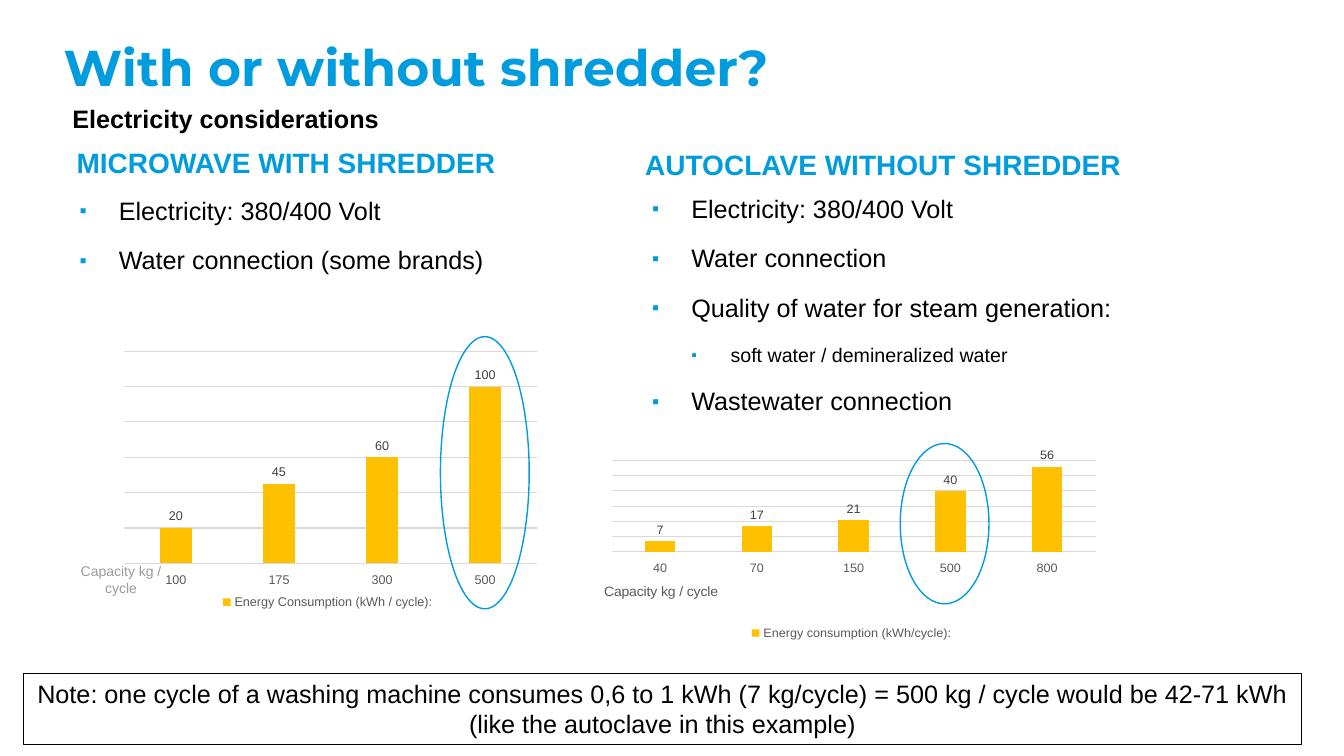
from dataclasses import dataclass

from lxml import etree
from pptx import Presentation
from pptx.chart.data import CategoryChartData
from pptx.dml.color import RGBColor
from pptx.enum.chart import XL_CHART_TYPE, XL_LABEL_POSITION, XL_LEGEND_POSITION, XL_TICK_LABEL_POSITION, XL_TICK_MARK
from pptx.enum.shapes import MSO_SHAPE
from pptx.enum.text import MSO_ANCHOR, MSO_AUTO_SIZE, PP_ALIGN
from pptx.oxml.ns import qn
from pptx.util import Pt

COLUMNS = XL_CHART_TYPE.COLUMN_CLUSTERED
OUTSIDE_END = XL_LABEL_POSITION.OUTSIDE_END
LEGEND_BOTTOM = XL_LEGEND_POSITION.BOTTOM
LABELS_LOW = XL_TICK_LABEL_POSITION.LOW
NO_TICK = XL_TICK_MARK.NONE
ELLIPSE, RECTANGLE = MSO_SHAPE.OVAL, MSO_SHAPE.RECTANGLE
TOP, MIDDLE, BOTTOM = MSO_ANCHOR.TOP, MSO_ANCHOR.MIDDLE, MSO_ANCHOR.BOTTOM
LEFT, CENTER, JUSTIFY = PP_ALIGN.LEFT, PP_ALIGN.CENTER, PP_ALIGN.JUSTIFY
NO_AUTOFIT = MSO_AUTO_SIZE.NONE
COMPARISON_LAYOUT = 4
BULLET_INDENT = 28


@dataclass(frozen=True)
class Theme:
    heading_font: str = "Montserrat"
    font: str = "Arial"
    blue: str = "009CDE"
    black: str = "000000"
    caption: str = "9B9B9B"
    axis_text: str = "595959"
    label_text: str = "404040"
    grid: str = "D9D9D9"
    bar: str = "FFC000"
    title_size: int = 36
    heading_size: int = 20
    body_size: int = 18
    detail_size: int = 14
    caption_size: int = 10
    chart_size: int = 9


@dataclass(frozen=True)
class Box:
    left: float
    top: float
    width: float
    height: float

    def lengths(self):
        return Pt(self.left), Pt(self.top), Pt(self.width), Pt(self.height)

    def inner(self, left, top, width, height):
        return Box(self.left + left, self.top + top, width, height)


THEME = Theme()


def style_font(font, size, color, bold=False, name=THEME.font):
    font.name, font.size, font.bold = name, Pt(size), bold
    font.color.rgb = RGBColor.from_string(color)


def style_line(line, color, width):
    line.color.rgb = RGBColor.from_string(color)
    line.width = Pt(width)


def place(shape, box):
    shape.left, shape.top, shape.width, shape.height = box.lengths()


def set_frame(text_frame, anchor, left, right, vertical=0):
    text_frame.word_wrap = True
    text_frame.auto_size = NO_AUTOFIT
    text_frame.vertical_anchor = anchor
    text_frame.margin_left, text_frame.margin_right = Pt(left), Pt(right)
    text_frame.margin_top = text_frame.margin_bottom = Pt(vertical)


def write_line(text_frame, text, alignment, size, color, bold=False, name=THEME.font):
    text_frame.text = text
    paragraph = text_frame.paragraphs[0]
    paragraph.alignment = alignment
    style_font(paragraph.runs[0].font, size, color, bold, name)
    return paragraph


def add_bullet(paragraph, level):
    properties = paragraph._p.get_or_add_pPr()
    properties.set("marL", str(Pt(BULLET_INDENT * (level + 1))))
    properties.set("indent", str(-Pt(BULLET_INDENT)))
    color = etree.SubElement(properties, qn("a:buClr"))
    etree.SubElement(color, qn("a:srgbClr"), val=THEME.blue)
    etree.SubElement(properties, qn("a:buSzPct"), val="80000")
    etree.SubElement(properties, qn("a:buFont"), typeface=THEME.font)
    etree.SubElement(properties, qn("a:buChar"), char="▪")


def set_layout(element, index, target=None, **fractions):
    """Fix a chart part at fractions of the chart area."""
    for old in element.findall(qn("c:layout")):
        element.remove(old)
    layout = etree.Element(qn("c:layout"))
    manual = etree.SubElement(layout, qn("c:manualLayout"))
    if target:
        etree.SubElement(manual, qn("c:layoutTarget"), val=target)
    for axis in "xy":
        etree.SubElement(manual, qn(f"c:{axis}Mode"), val="edge")
    for key, value in fractions.items():
        etree.SubElement(manual, qn(f"c:{key}"), val=str(value))
    element.insert(index, layout)


def add_outline(slide, preset, box, color, width):
    shape = slide.shapes.add_shape(preset, *box.lengths())
    shape.shadow.inherit = False
    shape.fill.background()
    style_line(shape.line, color, width)
    return shape


def add_text(slide, box, text, alignment, size, color, bold=False):
    text_box = slide.shapes.add_textbox(*box.lengths())
    set_frame(text_box.text_frame, TOP, 7.2, 7.2, 3.6)
    write_line(text_box.text_frame, text, alignment, size, color, bold)


def fill_header(slide, box):
    title = slide.shapes.title
    place(title, box)
    set_frame(title.text_frame, BOTTOM, 1.4, 28)
    paragraph = write_line(title.text_frame, "With or without shredder?", LEFT,
                           THEME.title_size, THEME.blue, True, THEME.heading_font)
    paragraph.line_spacing = 0.9
    add_text(slide, box.inner(0.6, 49, 260, 28.8), "Electricity considerations",
             LEFT, THEME.body_size, THEME.black, True)


def fill_heading(placeholder, box, text):
    place(placeholder, box)
    set_frame(placeholder.text_frame, MIDDLE, 7.2, 7.2)
    paragraph = write_line(placeholder.text_frame, text, LEFT, THEME.heading_size, THEME.blue, True)
    paragraph.line_spacing = 1.1
    paragraph.space_before, paragraph.space_after = Pt(0), Pt(6)


def fill_list(placeholder, box, items):
    place(placeholder, box)
    text_frame = placeholder.text_frame
    set_frame(text_frame, TOP, 1.4, 1.4)
    text_frame.text = "\n".join(text for text, level in items)
    for number, (paragraph, (text, level)) in enumerate(zip(text_frame.paragraphs, items)):
        paragraph.level = level
        add_bullet(paragraph, level)
        paragraph.alignment = JUSTIFY
        paragraph.line_spacing = 0.9
        paragraph.space_before, paragraph.space_after = Pt(10 if number else 0), Pt(6)
        size = THEME.detail_size if level else THEME.body_size
        style_font(paragraph.runs[0].font, size, THEME.black)


def add_energy_chart(slide, box, name, values, axis_top, plot_height, legend_left):
    data = CategoryChartData()
    data.categories = list(values)
    data.add_series(name, list(values.values()))
    chart = slide.shapes.add_chart(COLUMNS, *box.lengths(), data).chart
    style_font(chart.font, THEME.caption_size, THEME.black)
    chart.has_title = False

    # Bars and their values
    plot = chart.plots[0]
    plot.gap_width, plot.overlap, plot.vary_by_categories = 219, -27, False
    fill = plot.series[0].format.fill
    fill.solid()
    fill.fore_color.rgb = RGBColor.from_string(THEME.bar)
    plot.has_data_labels = True
    labels = plot.data_labels
    labels.show_value, labels.position = True, OUTSIDE_END
    style_font(labels.font, THEME.chart_size, THEME.label_text)

    # Axes
    value_axis, category_axis = chart.value_axis, chart.category_axis
    value_axis.minimum_scale, value_axis.maximum_scale = 0, axis_top
    value_axis.major_unit = axis_top / 6
    value_axis.visible = False
    style_line(value_axis.major_gridlines.format.line, THEME.grid, 0.75)
    category_axis.major_tick_mark = NO_TICK
    category_axis.tick_label_position = LABELS_LOW
    style_font(category_axis.tick_labels.font, THEME.chart_size, THEME.axis_text)
    style_line(category_axis.format.line, THEME.grid, 0.75)

    # Legend and plot area
    chart.has_legend = True
    chart.legend.position, chart.legend.include_in_layout = LEGEND_BOTTOM, False
    style_font(chart.legend.font, THEME.chart_size, THEME.axis_text)
    set_layout(chart.legend._element, 1, x=legend_left, y=0.9)
    plot_area = chart._chartSpace.chart.plotArea
    set_layout(plot_area, 0, "inner", x=0.02, y=round(4 / box.height, 2), w=0.96, h=plot_height)
    return chart


def fill_microwave(slide, box, heading, body):
    fill_heading(heading, box.inner(0, 0, 388.8, 58.3), "MICROWAVE WITH SHREDDER")
    fill_list(body, box.inner(8, 56, 388.8, 100),
              [("Electricity: 380/400 Volt", 0), ("Water connection (some brands)", 0)])
    add_energy_chart(slide, box.inner(35.3, 161.3, 306.7, 194.4), "Energy Consumption (kWh / cycle):",
                     {"100": 20, "175": 45, "300": 60, "500": 100}, 120, 0.78, 0.24)
    add_outline(slide, ELLIPSE, box.inner(267.1, 154.8, 63.4, 194.4), THEME.blue, 1)
    add_text(slide, box.inner(0, 312.5, 77.8, 31.7), "Capacity kg / cycle",
             CENTER, THEME.caption_size, THEME.caption)


def fill_autoclave(slide, box, heading, body):
    fill_heading(heading, box.inner(0, 0, 388.8, 58.3), "AUTOCLAVE WITHOUT SHREDDER")
    fill_list(body, box.inner(10.8, 53.3, 444.2, 170),
              [("Electricity: 380/400 Volt", 0), ("Water connection", 0),
               ("Quality of water for steam generation:", 0),
               ("soft water / demineralized water", 1), ("Wastewater connection", 0)])
    chart = add_energy_chart(slide, box.inner(-23.8, 233.3, 360, 140.4), "Energy consumption (kWh/cycle):",
                             {"40": 7, "70": 17, "150": 21, "500": 40, "800": 56}, 60, 0.48, 0.29)
    axis_title = chart.category_axis.axis_title
    write_line(axis_title.text_frame, "Capacity kg / cycle", LEFT, THEME.caption_size, THEME.axis_text)
    set_layout(axis_title._element, 1, x=0, y=0.66)
    add_outline(slide, ELLIPSE, box.inner(189.4, 229.7, 63.4, 114.5), THEME.blue, 1)


def add_note(slide, box):
    note = add_outline(slide, RECTANGLE, box, THEME.black, 0.75)
    set_frame(note.text_frame, TOP, 7.2, 7.2, 3.6)
    write_line(note.text_frame, "Note: one cycle of a washing machine consumes 0,6 to 1 kWh (7 kg/cycle) = "
               "500 kg / cycle would be 42-71 kWh (like the autoclave in this example)",
               CENTER, THEME.body_size, THEME.black)


def main():
    presentation = Presentation()
    presentation.slide_width, presentation.slide_height = Pt(960), Pt(540)
    slide = presentation.slides.add_slide(presentation.slide_layouts[COMPARISON_LAYOUT])
    holders = slide.placeholders
    fill_header(slide, Box(44, 21.6, 792, 48.2))
    fill_microwave(slide, Box(47.5, 85.7, 396, 356), holders[1], holders[2])
    fill_autoclave(slide, Box(453.6, 87.1, 455, 374), holders[3], holders[4])
    add_note(slide, Box(16.6, 481, 913, 51.1))
    presentation.save("out.pptx")


if __name__ == "__main__":
    main()
